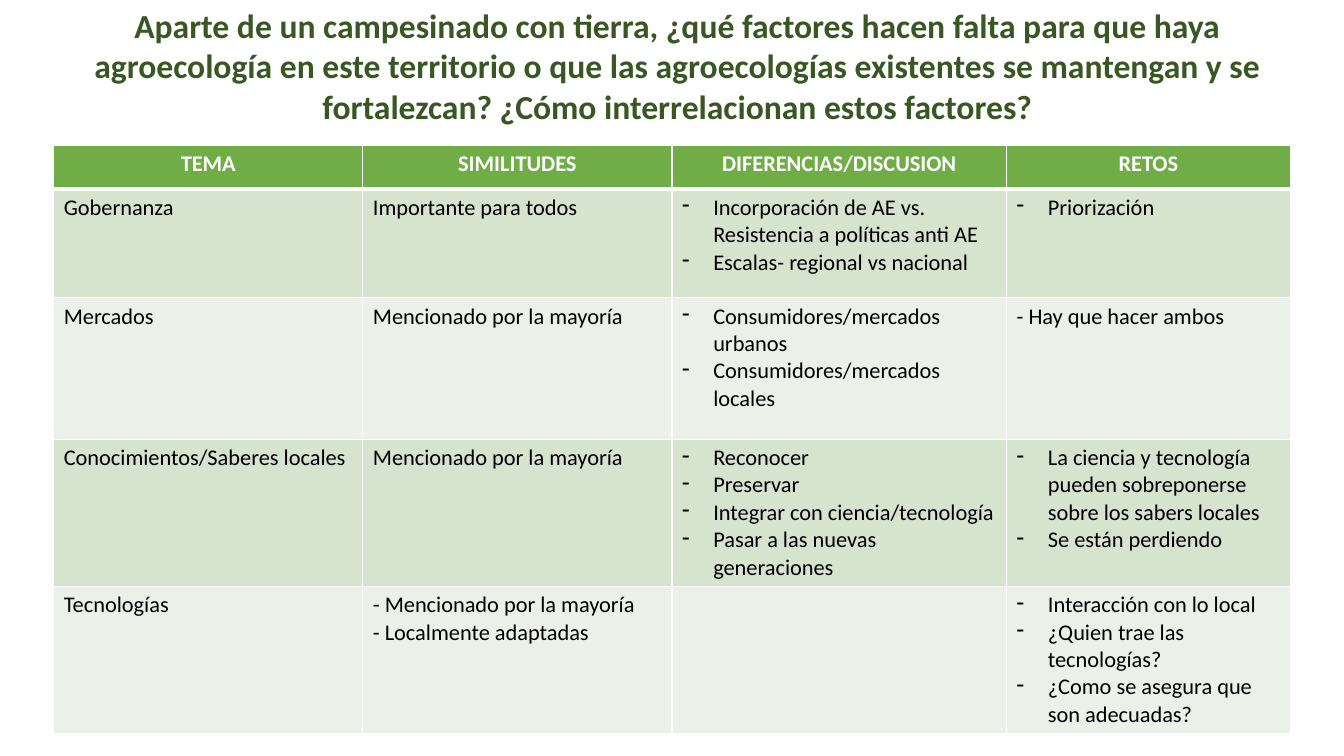
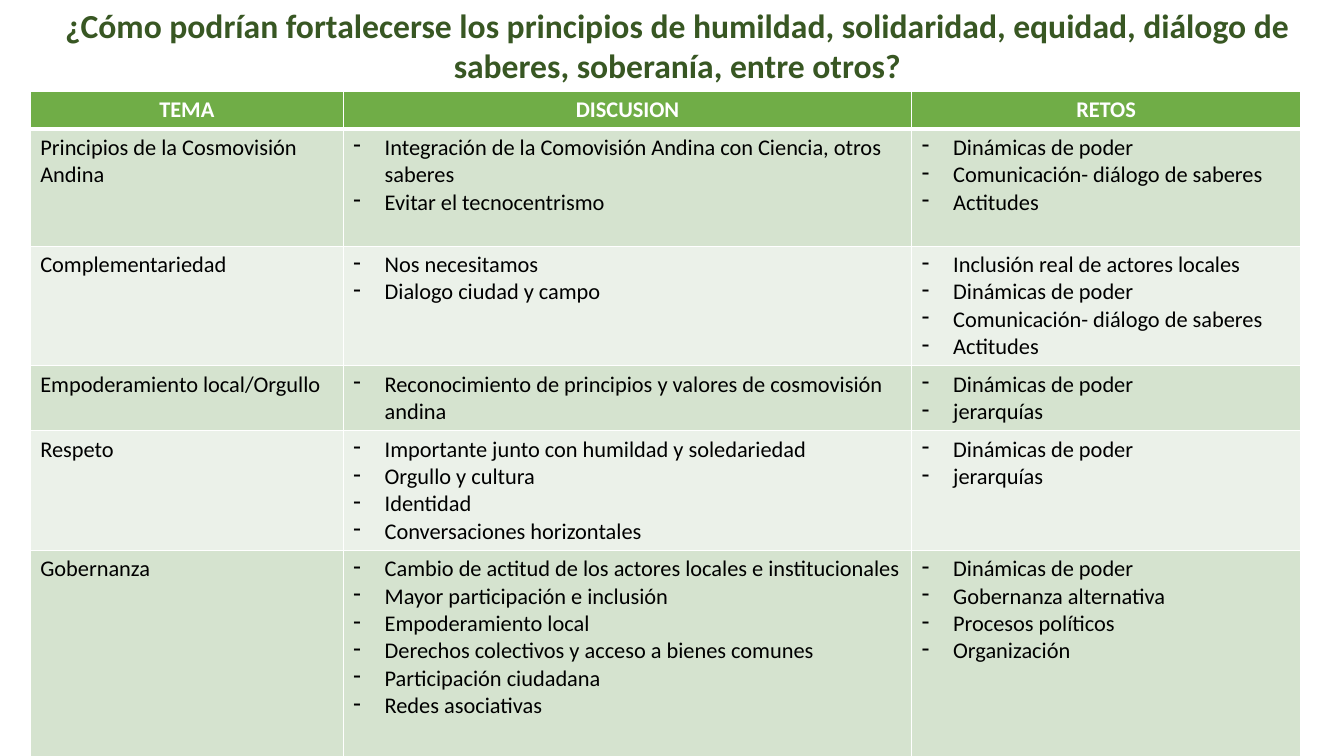
import pptx
import pptx.dml.color
import pptx.enum.text
import pptx.util
from dataclasses import dataclass
from lxml import etree
from pptx.oxml import ns

PP_ALIGN = pptx.enum.text.PP_ALIGN
WIDTH, HEIGHT = 13.33, 7.5


@dataclass(frozen=True)
class Theme:
    font: str = "Calibri"
    title_size: int = 24
    cell_size: int = 16
    title: str = "385723"
    header: str = "70AD47"
    bands: tuple = ("D5E3CF", "EBF1E9")
    text: str = "000000"
    white: str = "FFFFFF"
    rule: int = 1
    header_rule: int = 3
    indent: float = 0.31


THEME = Theme()


def across(percent):
    return pptx.util.Inches(WIDTH * percent / 100)


def down(percent):
    return pptx.util.Inches(HEIGHT * percent / 100)


def color(value):
    return pptx.dml.color.RGBColor.from_string(value)


def add_run(p, text, size, rgb, bold=False):
    r = p.add_run()
    r.text = text
    r.font.name = THEME.font
    r.font.size = pptx.util.Pt(size)
    r.font.bold = bold
    r.font.color.rgb = color(rgb)


def add_dash(p):
    """Give the paragraph a dash bullet with a hanging indent."""
    pPr = p._p.get_or_add_pPr()
    indent = pptx.util.Inches(THEME.indent)
    pPr.set("marL", str(indent))
    pPr.set("indent", str(-indent))
    etree.SubElement(pPr, ns.qn("a:buFontTx"))
    etree.SubElement(pPr, ns.qn("a:buChar")).set("char", "-")


def set_borders(cell, top, bottom):
    """Draw white rules round the cell; top and bottom are in points."""
    tcPr = cell._tc.get_or_add_tcPr()
    sides = {"L": THEME.rule, "R": THEME.rule, "T": top, "B": bottom}
    for side, points in sides.items():
        ln = etree.SubElement(tcPr, ns.qn(f"a:ln{side}"))
        ln.set("w", str(pptx.util.Pt(points)))
        fill = etree.SubElement(ln, ns.qn("a:solidFill"))
        etree.SubElement(fill, ns.qn("a:srgbClr")).set("val", THEME.white)


def fill_cell(cell, content, row):
    """Write a cell; a list becomes dashed items, a string plain lines."""
    header = row == 0
    set_borders(cell,
                THEME.header_rule if row == 1 else THEME.rule,
                THEME.header_rule if header else THEME.rule)
    cell.fill.solid()
    cell.fill.fore_color.rgb = color(
        THEME.header if header else THEME.bands[(row - 1) % 2])
    dashed = isinstance(content, list)
    lines = content if dashed else content.splitlines()
    tf = cell.text_frame
    for i, line in enumerate(lines):
        p = tf.paragraphs[0] if i == 0 else tf.add_paragraph()
        if header:
            p.alignment = PP_ALIGN.CENTER
        if dashed:
            add_dash(p)
        add_run(p, line, THEME.cell_size,
                THEME.white if header else THEME.text, header)


def add_title(s, text, height):
    sp = s.shapes.title
    sp.left, sp.top = across(4), 0
    sp.width, sp.height = across(92.8), down(height)
    tf = sp.text_frame
    tf.word_wrap = True
    tf.auto_size = pptx.enum.text.MSO_AUTO_SIZE.NONE
    tf.vertical_anchor = pptx.enum.text.MSO_ANCHOR.TOP
    p = tf.paragraphs[0]
    p.alignment = PP_ALIGN.CENTER
    add_run(p, text, THEME.title_size, THEME.title, True)


def add_grid(s, left, top, columns, rows, cells):
    """Place a table; all lengths are percentages of the slide."""
    table = s.shapes.add_table(len(rows), len(columns), across(left), down(top),
                               across(sum(columns)), down(sum(rows))).table
    table.first_row = table.horz_banding = False
    for column, width in zip(table.columns, columns):
        column.width = across(width)
    for row, height in zip(table.rows, rows):
        row.height = down(height)
    for i, contents in enumerate(cells):
        for j, content in enumerate(contents):
            fill_cell(table.cell(i, j), content, i)


def add_table_slide(prs, title, title_height, **grid):
    s = prs.slides.add_slide(prs.slide_layouts.get_by_name("Title Only"))
    add_title(s, title, title_height)
    add_grid(s, **grid)


FACTORS = [
    ["TEMA", "SIMILITUDES", "DIFERENCIAS/DISCUSION", "RETOS"],
    ["Gobernanza", "Importante para todos",
     ["Incorporación de AE vs. Resistencia a políticas anti AE",
      "Escalas- regional vs nacional"],
     ["Priorización"]],
    ["Mercados", "Mencionado por la mayoría",
     ["Consumidores/mercados urbanos", "Consumidores/mercados locales"],
     "- Hay que hacer ambos"],
    ["Conocimientos/Saberes locales", "Mencionado por la mayoría",
     ["Reconocer", "Preservar", "Integrar con ciencia/tecnología",
      "Pasar a las nuevas generaciones"],
     ["La ciencia y tecnología pueden sobreponerse sobre los sabers locales",
      "Se están perdiendo"]],
    ["Tecnologías", "- Mencionado por la mayoría\n- Localmente adaptadas", "",
     ["Interacción con lo local", "¿Quien trae las tecnologías?",
      "¿Como se asegura que son adecuadas?"]],
]

PRINCIPLES = [
    ["TEMA", "DISCUSION", "RETOS"],
    ["Principios de la Cosmovisión Andina",
     ["Integración de la Comovisión Andina con Ciencia, otros saberes",
      "Evitar el tecnocentrismo"],
     ["Dinámicas de poder", "Comunicación- diálogo de saberes", "Actitudes"]],
    ["Complementariedad",
     ["Nos necesitamos", "Dialogo ciudad y campo"],
     ["Inclusión real de actores locales", "Dinámicas de poder",
      "Comunicación- diálogo de saberes", "Actitudes"]],
    ["Empoderamiento local/Orgullo",
     ["Reconocimiento de principios y valores de cosmovisión andina"],
     ["Dinámicas de poder", "jerarquías"]],
    ["Respeto",
     ["Importante junto con humildad y soledariedad", "Orgullo y cultura",
      "Identidad", "Conversaciones horizontales"],
     ["Dinámicas de poder", "jerarquías"]],
    ["Gobernanza",
     ["Cambio de actitud de los actores locales e institucionales",
      "Mayor participación e inclusión", "Empoderamiento local",
      "Derechos colectivos y acceso a bienes comunes",
      "Participación ciudadana", "Redes asociativas"],
     ["Dinámicas de poder", "Gobernanza alternativa", "Procesos políticos",
      "Organización"]],
]


def main():
    prs = pptx.Presentation()
    prs.slide_width, prs.slide_height = across(100), down(100)
    add_table_slide(
        prs,
        "Aparte de un campesinado con tierra, ¿qué factores hacen falta para "
        "que haya agroecología en este territorio o que las agroecologías "
        "existentes se mantengan y se fortalezcan? ¿Cómo interrelacionan "
        "estos factores?",
        17.5, left=4, top=19.2, columns=(23, 23, 24.9, 21.1),
        rows=(5.8, 14.4, 18.7, 19.2, 19), cells=FACTORS)
    add_table_slide(
        prs,
        "¿Cómo podrían fortalecerse los principios de humildad, solidaridad, "
        "equidad, diálogo de saberes, soberanía, entre otros?",
        12.1, left=2.25, top=12.1, columns=(23.3, 42.3, 28.9),
        rows=(4.9, 15.5, 15.5, 8.4, 15.5, 28.2), cells=PRINCIPLES)
    prs.save("out.pptx")


if __name__ == "__main__":
    main()
